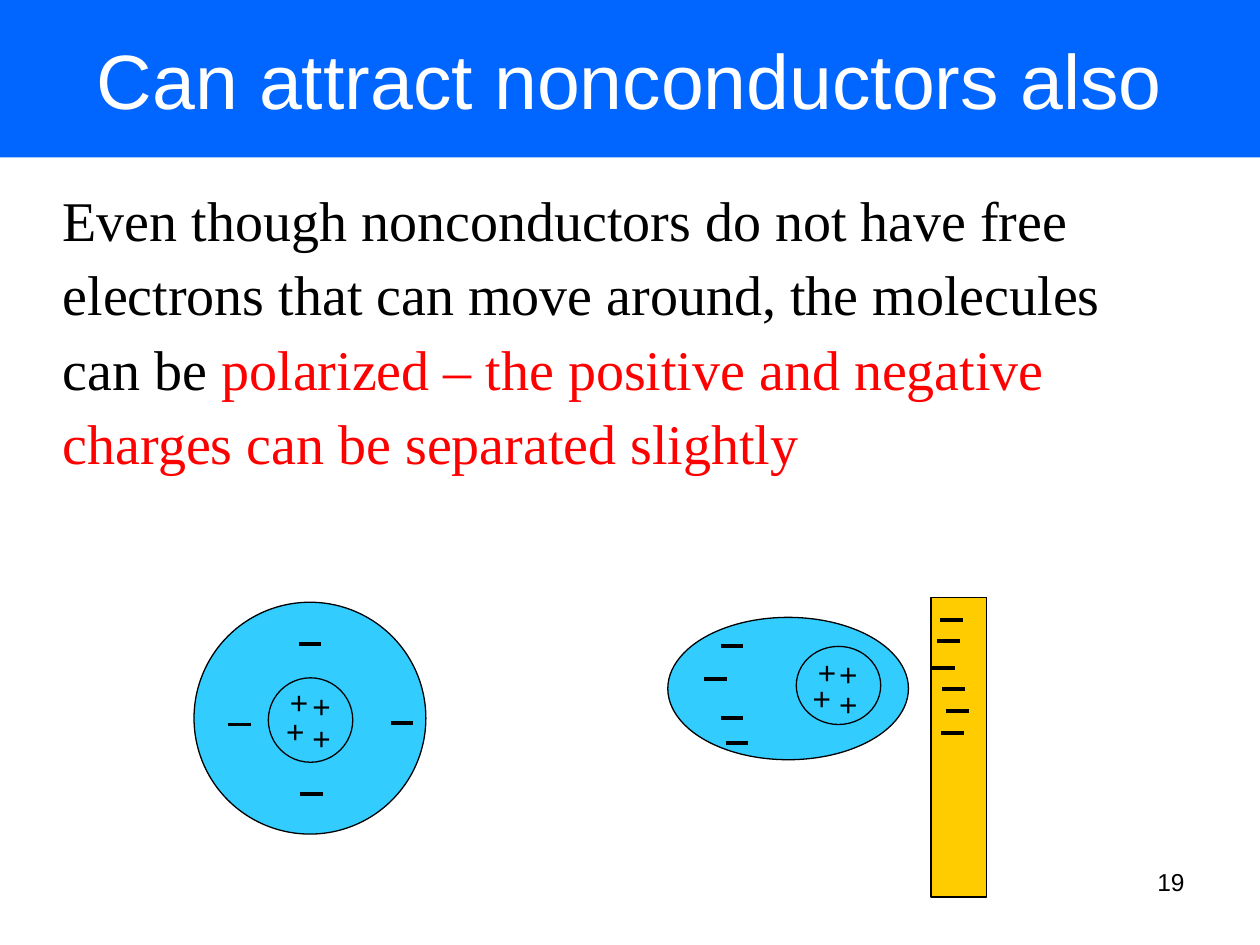
from pptx import Presentation
from pptx.dml.color import RGBColor
from pptx.enum import shapes, text
from pptx.oxml.ns import qn
from pptx.util import Inches, Pt

BLACK, WHITE, RED = "000000", "FFFFFF", "FF0000"
BLUE, CYAN, GOLD = "0066FF", "33CCFF", "FFCC00"
MINUS_LENGTH = 0.18


def color(value):
    return RGBColor.from_string(value)


def style_run(run, size, font, value):
    run.font.size = Pt(size)
    run.font.name = font
    run.font.color.rgb = color(value)


def add_outlined(parent, kind, box, fill=None):
    shape = parent.shapes.add_shape(kind, *map(Inches, box))
    shape.shadow.inherit = False
    if fill:
        shape.fill.solid()
        shape.fill.fore_color.rgb = color(fill)
    else:
        shape.fill.background()
    shape.line.color.rgb = color(BLACK)
    shape.line.width = Pt(0.75)
    return shape


def add_label(parent, box, label, size, wrap=True, margin=None):
    text_box = parent.shapes.add_textbox(*map(Inches, box))
    frame = text_box.text_frame
    frame.word_wrap = wrap
    if margin is not None:
        frame.margin_left = frame.margin_right = Inches(margin)
        frame.margin_top = frame.margin_bottom = Inches(margin)
    frame.text = label
    style_run(frame.paragraphs[0].runs[0], size, "Arial", BLACK)
    return frame


def add_minuses(parent, left, top, offsets):
    """Draw negative charges at offsets from the corner of their body."""
    for x, y in offsets:
        start, level = Inches(left + x), Inches(top + y)
        line = parent.shapes.add_connector(
            shapes.MSO_CONNECTOR.STRAIGHT, start, level,
            start + Inches(MINUS_LENGTH), level)
        line.line.color.rgb = color(BLACK)
        line.line.width = Pt(2.25)
        properties = line._element.spPr
        properties.append(properties.makeelement(qn("a:effectLst"), {}))


def add_title(slide, box):
    title = slide.shapes.title
    title.left, title.top, title.width, title.height = map(Inches, box)
    title.fill.solid()
    title.fill.fore_color.rgb = color(BLUE)
    frame = title.text_frame
    frame.text = "Can attract nonconductors also"
    frame.vertical_anchor = text.MSO_ANCHOR.MIDDLE
    paragraph = frame.paragraphs[0]
    paragraph.alignment = text.PP_ALIGN.CENTER
    style_run(paragraph.runs[0], 44, "Arial", WHITE)


def add_body(slide, box):
    lines = [
        [("Even though nonconductors do not have free", BLACK)],
        [("electrons that can move around, the molecules", BLACK)],
        [("can be ", BLACK), ("polarized – the positive and negative", RED)],
        [("charges can be separated slightly", RED)],
    ]
    frame = slide.shapes.add_textbox(*map(Inches, box)).text_frame
    frame.word_wrap = True
    for index, pieces in enumerate(lines):
        paragraph = frame.add_paragraph() if index else frame.paragraphs[0]
        paragraph.line_spacing = 0.9
        paragraph.space_before = Pt(8)
        properties = paragraph._p.get_or_add_pPr()
        properties.set("marL", str(Inches(0.38)))
        properties.set("indent", str(-Inches(0.38)))
        for words, value in pieces:
            run = paragraph.add_run()
            run.text = words
            style_run(run, 32, "Times New Roman", value)


def add_molecule(parent, box, nucleus, pluses, minuses):
    """Draw an electron cloud, its nucleus and the charges in both."""
    oval = shapes.MSO_SHAPE.OVAL
    add_outlined(parent, oval, box, CYAN)
    add_outlined(parent, oval, nucleus)
    for x, y in pluses:
        plus_box = (nucleus[0] + x, nucleus[1] + y, 0.15, 0.3)
        add_label(parent, plus_box, "+", 18, wrap=False, margin=0)
    add_minuses(parent, box[0], box[1], minuses)


def add_rod(parent, box, minuses):
    add_outlined(parent, shapes.MSO_SHAPE.RECTANGLE, box, GOLD)
    add_minuses(parent, box[0], box[1], minuses)


def add_page_number(slide, box):
    frame = add_label(slide, box, "19", 14)
    frame.paragraphs[0].alignment = text.PP_ALIGN.RIGHT


def main():
    presentation = Presentation()
    presentation.slide_width, presentation.slide_height = Inches(10), Inches(7.5)
    slide = presentation.slides.add_slide(presentation.slide_layouts[5])

    add_title(slide, (0, 0, 10, 1.25))
    add_body(slide, (0.4, 1.48, 9, 2.36))

    # Neutral molecule: charges spread evenly
    add_molecule(
        slide.shapes.add_group_shape(),
        (1.54, 4.78, 1.84, 1.84), (2.13, 5.38, 0.67, 0.67),
        [(0.17, 0.04), (0.35, 0.07), (0.35, 0.33), (0.14, 0.27)],
        [(0.83, 0.33), (1.56, 0.96), (0.84, 1.52), (0.27, 0.97)])

    # Polarized molecule beside a charged rod
    polarized = slide.shapes.add_group_shape()
    add_molecule(
        polarized,
        (5.3, 4.9, 1.91, 1.13), (6.32, 5.13, 0.67, 0.62),
        [(0.17, 0.05), (0.34, 0.07), (0.34, 0.31), (0.13, 0.26)],
        [(0.42, 0.23), (0.42, 0.8), (0.46, 1), (0.29, 0.49)])
    add_rod(
        polarized, (7.39, 4.74, 0.44, 2.38),
        [(0.07, 0.18), (0.05, 0.35), (0.01, 0.56),
         (0.09, 0.73), (0.12, 0.9), (0.08, 1.08)])

    add_page_number(slide, (7.17, 6.83, 2.33, 0.52))
    presentation.save("out.pptx")


if __name__ == "__main__":
    main()
